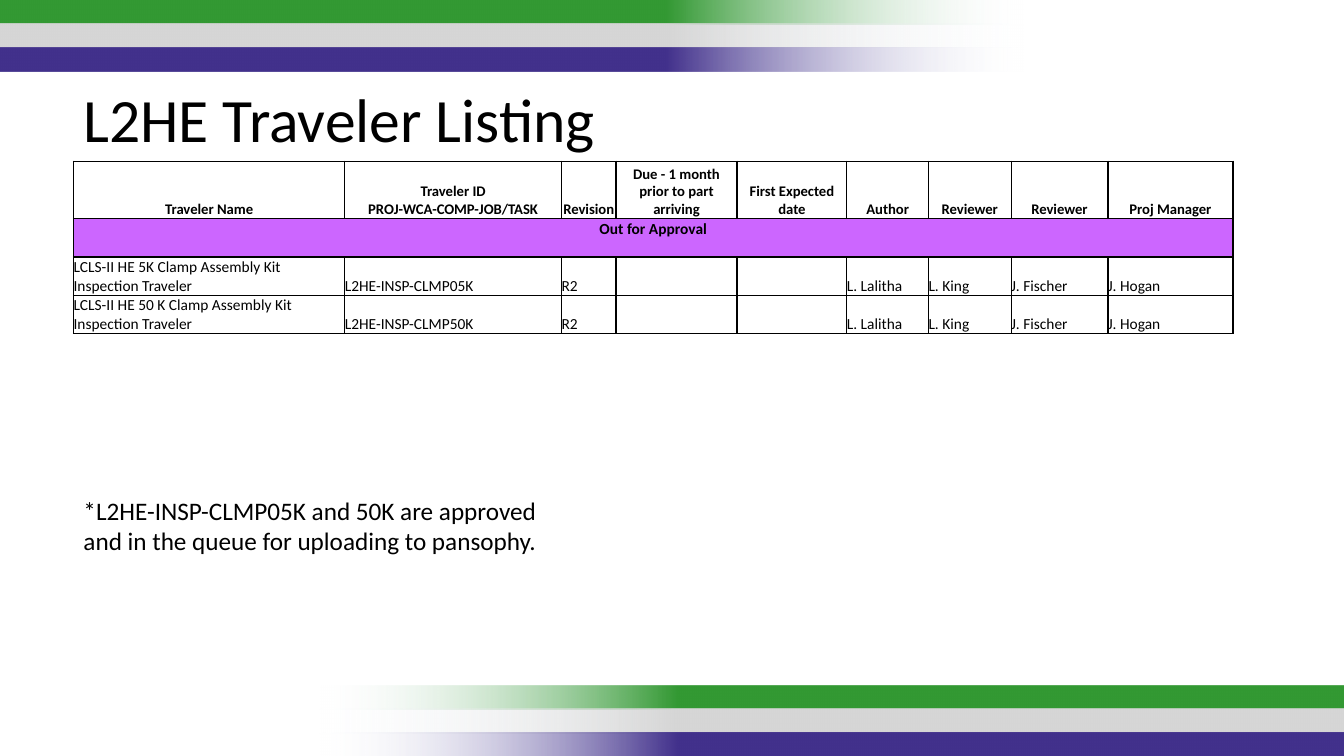
from lxml.etree import SubElement
from pptx import Presentation
from pptx.dml.color import RGBColor
from pptx.enum.shapes import MSO_SHAPE as Shape
from pptx.enum.text import MSO_ANCHOR as Anchor, MSO_AUTO_SIZE as AutoSize, PP_ALIGN as Align
from pptx.oxml.ns import qn
from pptx.util import Inches, Pt

FONT, BLACK, VIOLET = "Calibri", "000000", "CC66FF"
TITLE = "L2HE Traveler Listing"
NOTE = "*L2HE-INSP-CLMP05K and 50K are approved and in the queue for uploading to pansophy."
HEADERS = ["Traveler Name", "Traveler ID\nPROJ-WCA-COMP-JOB/TASK", "Revision",
           "Due - 1 month prior to part arriving", "First Expected date",
           "Author", "Reviewer", "Reviewer", "Proj Manager"]
STATUS = "Out for Approval"
PEOPLE = ["L. Lalitha", "L. King", "J. Fischer", "J. Hogan"]
TRAVELERS = [
    ("LCLS-II HE 5K Clamp Assembly Kit Inspection Traveler", "L2HE-INSP-CLMP05K"),
    ("LCLS-II HE 50 K Clamp Assembly Kit Inspection Traveler", "L2HE-INSP-CLMP50K"),
]
COLUMN_WIDTHS = [2.69, 2.15, 0.54, 1.2, 1.09, 0.81, 0.82, 0.96, 1.24]
ROW_HEIGHTS = [0.57, 0.38, 0.38, 0.38]
LEFT = 0.73

STRIPES = ["339933", "D6D6D6", "42318C"]
STRIPE_WIDTH, STRIPE_HEIGHT, STRIPE_STEP = 10.17, 0.24, 0.235
STRIPE_BANDS = [(-0.01, 0, 180), (3.17, 6.8, 0)]  # left, top, rotation

HEADER_STYLE = {"size": 10.5, "bold": True, "align": Align.CENTER, "margin": 0.01}
STATUS_STYLE = HEADER_STYLE | {"size": 11, "anchor": Anchor.TOP, "fill": VIOLET}
BODY_STYLE = {"size": 11}


def color(value):
    return RGBColor.from_string(value)


def format_text(frame, size, bold=False, align=Align.LEFT):
    for para in frame.paragraphs:
        para.alignment = align
        for span in para.runs:
            for name, value in {"name": FONT, "size": Pt(size), "bold": bold}.items():
                setattr(span.font, name, value)
            span.font.color.rgb = color(BLACK)


def add_stripe(page, left, top, rotation, tone):
    """Bar that fades from clear to its tone over the first 35 percent."""
    stripe = page.shapes.add_shape(Shape.RECTANGLE, Inches(left), Inches(top),
                                   Inches(STRIPE_WIDTH), Inches(STRIPE_HEIGHT))
    stripe.rotation = rotation
    stripe.shadow.inherit = False
    stripe.line.fill.background()
    stripe.fill.gradient()
    stripe.fill.gradient_angle = 0
    stops = stripe._element.spPr.find(".//" + qn("a:gsLst"))
    stops.clear()
    for percent, shade in [(0, "F7FAFD"), (35, tone), (100, tone)]:
        stop = SubElement(stops, qn("a:gs"), pos=str(percent * 1000))
        tint = SubElement(stop, qn("a:srgbClr"), val=shade)
        if percent == 0:
            SubElement(tint, qn("a:alpha"), val="0")


def add_text(page, text, top, width, height, size):
    box = page.shapes.add_textbox(Inches(LEFT), Inches(top), Inches(width), Inches(height))
    frame = box.text_frame
    frame.word_wrap = True
    frame.auto_size = AutoSize.SHAPE_TO_FIT_TEXT
    frame.text = text
    format_text(frame, size)


def add_borders(cell):
    properties = cell._tc.get_or_add_tcPr()
    for side in ("lnL", "lnR", "lnT", "lnB"):
        line = SubElement(properties, qn("a:" + side), w=str(Pt(1)))
        SubElement(SubElement(line, qn("a:solidFill")), qn("a:srgbClr"), val=BLACK)


def fill_cell(cell, text, size, bold=False, align=Align.LEFT, margin=0,
              anchor=Anchor.BOTTOM, fill=None):
    cell.text = text
    format_text(cell.text_frame, size, bold, align)
    cell.vertical_anchor = anchor
    for side in ("left", "right", "top"):
        setattr(cell, "margin_" + side, Inches(margin))
    cell.margin_bottom = 0
    add_borders(cell)
    if fill:
        cell.fill.solid()
        cell.fill.fore_color.rgb = color(fill)
    else:
        cell.fill.background()


def add_traveler_table(page):
    count = len(HEADERS)
    rows = [(HEADERS, HEADER_STYLE), ([STATUS] + [""] * (count - 1), STATUS_STYLE)]
    rows += [([name, code, "R2", "", ""] + PEOPLE, BODY_STYLE) for name, code in TRAVELERS]
    table = page.shapes.add_table(len(rows), count, Inches(LEFT), Inches(1.6),
                                  Inches(sum(COLUMN_WIDTHS)), Inches(sum(ROW_HEIGHTS))).table
    table.first_row = table.horz_banding = False
    for column, width in zip(table.columns, COLUMN_WIDTHS):
        column.width = Inches(width)
    for row, height, (texts, style) in zip(table.rows, ROW_HEIGHTS, rows):
        row.height = Inches(height)
        for cell, text in zip(row.cells, texts):
            fill_cell(cell, text, **style)
    table.cell(1, 0).merge(table.cell(1, count - 1))


def main():
    deck = Presentation()
    deck.slide_width, deck.slide_height = Inches(13.33), Inches(7.5)
    page = deck.slides.add_slide(deck.slide_layouts[6])
    for left, top, rotation in STRIPE_BANDS:
        for index, tone in enumerate(STRIPES):
            add_stripe(page, left, top + index * STRIPE_STEP, rotation, tone)
    add_traveler_table(page)
    add_text(page, TITLE, 0.75, 10.31, 0.84, 44)
    add_text(page, NOTE, 4.86, 4.77, 0.71, 18)
    deck.save("out.pptx")


if __name__ == "__main__":
    main()
